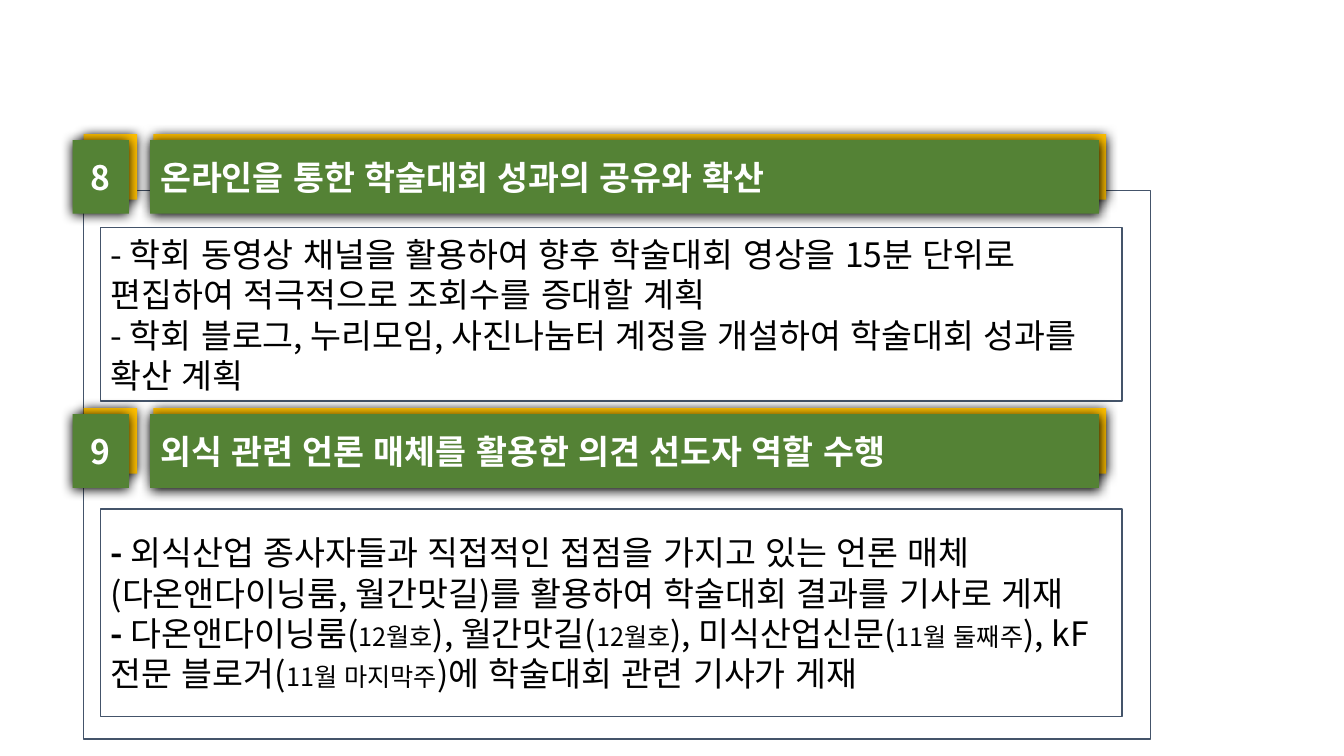
from lxml.etree import SubElement
from pptx import Presentation
from pptx.dml.color import RGBColor
from pptx.enum.lang import MSO_LANGUAGE_ID as Language
from pptx.enum.shapes import MSO_SHAPE as Preset
from pptx.enum.text import MSO_ANCHOR as Anchor, PP_ALIGN as Align
from pptx.oxml.ns import qn
from pptx.util import Inches, Pt

FONT = "Noto Sans CJK KR"
WHITE = RGBColor(0xFF, 0xFF, 0xFF)
BLACK = RGBColor(0, 0, 0)
GREEN = RGBColor(0x54, 0x82, 0x35)
GOLD = RGBColor(0xFF, 0xC0, 0x00)
NAVY = RGBColor(0x44, 0x54, 0x6A)

BODY, BOLD, SMALL = (24, False), (24, True), (18, False)

SHARING = [
    [("- 학회 동영상 채널을 활용하여 향후 학술대회 영상을 15분 단위로 편집하여 "
      "적극적으로 조회수를 증대할 계획", BODY)],
    [("- 학회 블로그, 누리모임, 사진나눔터 계정을 개설하여 학술대회 성과를 확산 계획", BODY)],
]
MEDIA = [
    [("-", BOLD),
     (" 외식산업 종사자들과 직접적인 접점을 가지고 있는 언론 매체"
      "(다온앤다이닝룸, 월간맛길)를 활용하여 학술대회 결과를 기사로 게재", BODY)],
    [("-", BOLD), (" 다온앤다이닝룸(", BODY), ("12월호", SMALL),
     ("), 월간맛길(", BODY), ("12월호", SMALL),
     ("), 미식산업신문(", BODY), ("11월 둘째주", SMALL),
     ("), kF전문 블로거(", BODY), ("11월 마지막주", SMALL),
     (")에 학술대회 관련 기사가 게재", BODY)],
]


def add_box(slide, left, top, width, height, fill, line=None):
    """Add a flat rectangle with an optional outline."""
    shape = slide.shapes.add_shape(
        Preset.RECTANGLE, Inches(left), Inches(top), Inches(width), Inches(height))
    shape.shadow.inherit = False
    shape.fill.solid()
    shape.fill.fore_color.rgb = fill
    if line is None:
        shape.line.fill.background()
    else:
        shape.line.color.rgb = line
        shape.line.width = Pt(1)
    shape.text_frame.word_wrap = True
    shape.text_frame.vertical_anchor = Anchor.MIDDLE
    return shape


def add_shadow(shape):
    """Give the shape a soft black shadow falling downwards."""
    effects = shape._element.spPr.find(qn("a:effectLst"))
    shadow = SubElement(effects, qn("a:outerShdw"), blurRad=str(Pt(8.5)),
                        dist=str(Pt(1)), dir="5400000", rotWithShape="0")
    SubElement(shadow, qn("a:srgbClr"), val=str(BLACK))


def add_run(paragraph, text, style, color):
    """Add an unkerned Korean run with one font for all scripts."""
    run = paragraph.add_run()
    run.text = text
    size, bold = style
    run.font.size, run.font.bold, run.font.name = Pt(size), bold, FONT
    run.font.color.rgb = color
    run.font.language_id = Language.KOREAN
    properties = run._r.get_or_add_rPr()
    properties.set("kern", "0")
    SubElement(properties, qn("a:ea"), typeface=FONT)


def add_label(slide, left, top, width, text, alignment):
    """Add a shadowed green box with a white bold label."""
    shape = add_box(slide, left, top, width, 0.73, GREEN)
    add_shadow(shape)
    paragraph = shape.text_frame.paragraphs[0]
    paragraph.alignment = alignment
    add_run(paragraph, text, BOLD, WHITE)


def add_heading(slide, top, number, title):
    """Add a numbered heading with gold plates behind it."""
    add_shadow(add_box(slide, 0.83, top, 0.53, 0.65, GOLD))
    add_label(slide, 0.72, top + 0.06, 0.56, number, Align.CENTER)
    add_shadow(add_box(slide, 1.52, top, 9.45, 0.65, GOLD))
    add_label(slide, 1.49, top + 0.06, 9.41, title, Align.LEFT)


def add_body(slide, top, height, paragraphs):
    """Add an outlined box of body paragraphs."""
    frame = add_box(slide, 1, top, 10.13, height, WHITE, NAVY).text_frame
    for index, runs in enumerate(paragraphs):
        paragraph = frame.add_paragraph() if index else frame.paragraphs[0]
        paragraph.alignment = Align.LEFT
        for text, style in runs:
            add_run(paragraph, text, style, BLACK)


def main():
    """Build the slide and save it."""
    presentation = Presentation()
    presentation.slide_width = Inches(13.33)
    presentation.slide_height = Inches(7.5)
    slide = presentation.slides.add_slide(presentation.slide_layouts[6])
    add_box(slide, 0.83, 1.89, 10.58, 5.44, WHITE, NAVY)
    add_heading(slide, 1.33, "8", "온라인을 통한 학술대회 성과의 공유와 확산")
    add_body(slide, 2.26, 1.72, SHARING)
    add_heading(slide, 4.05, "9", "외식 관련 언론 매체를 활용한 의견 선도자 역할 수행")
    add_body(slide, 5.05, 2.06, MEDIA)
    presentation.save("out.pptx")


if __name__ == "__main__":
    main()
